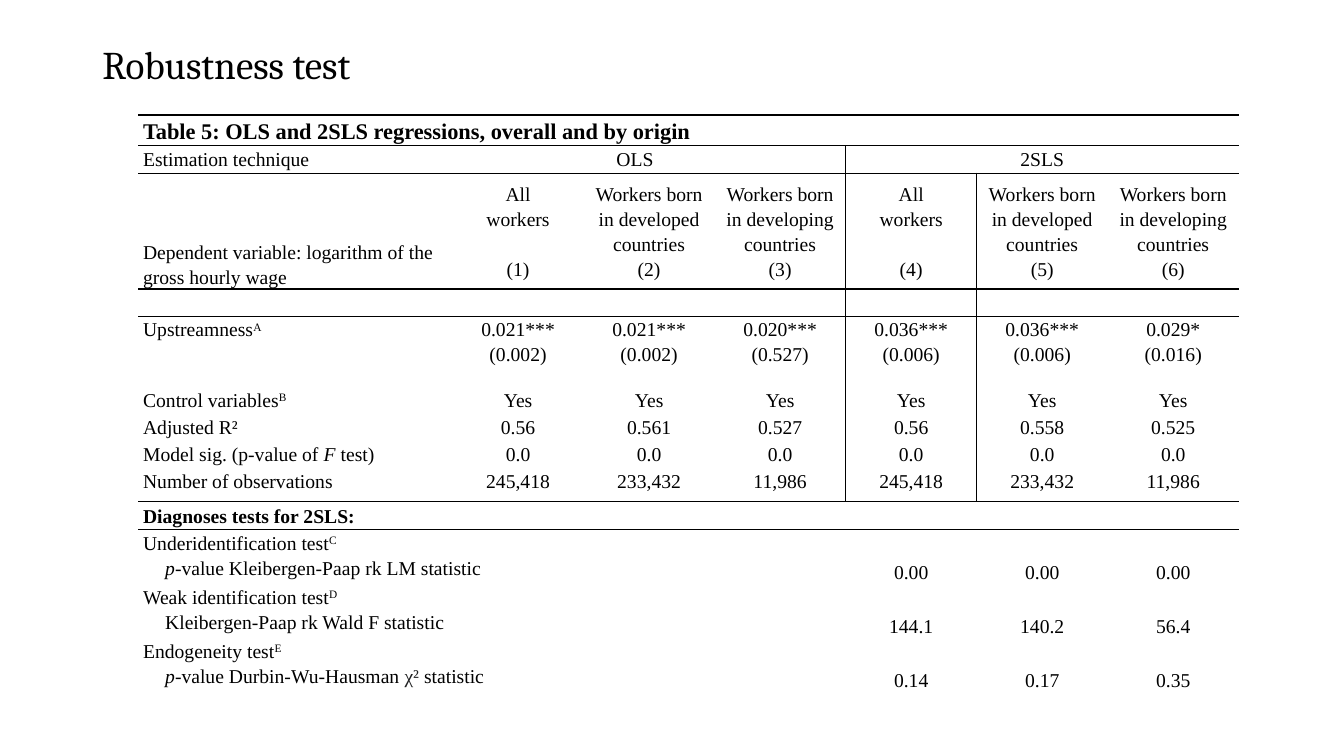
import pptx
import pptx.dml.color
import pptx.enum.text
import pptx.oxml.ns
import pptx.util
from lxml import etree

Pt = pptx.util.Pt
qn = pptx.oxml.ns.qn
ALIGN = pptx.enum.text.PP_ALIGN
ANCHOR = pptx.enum.text.MSO_ANCHOR

BLACK = pptx.dml.color.RGBColor(0x00, 0x00, 0x00)
CHARCOAL = pptx.dml.color.RGBColor(0x20, 0x21, 0x22)
NO_GRID_STYLE = "{2D5ABB26-0587-4C30-8999-92F81FD0307C}"

# Table geometry
COLUMN_WIDTHS = [204.5, 20.2] + [93.6] * 6
ROW_HEIGHTS = [22, 19.5, 82.8, 19.5, 50.5] + [19.3] * 3 + [24, 20] + [38.6] * 3
FIRST_VALUE, FIRST_2SLS = 2, 5
RULED_ROWS = (0, 1, 2, 3, 9)  # rows with a rule above
DIVIDED_ROWS = range(1, 9)  # rows with the OLS | 2SLS divider

# Column headings, repeated for OLS and 2SLS
SAMPLES = [
    "All\nworkers",
    "Workers born in developed countries",
    "Workers born in developing countries",
]

# Each label is a list of (text, style) runs
RESULTS = [
    ([("Upstreamness", ""), ("A", "superscript")],
     ["0.021***\n(0.002)", "0.021***\n(0.002)", "0.020***\n(0.527)",
      "0.036***\n(0.006)", "0.036***\n(0.006)", "0.029*\n(0.016)"]),
    ([("Control variables", ""), ("B", "superscript")], ["Yes"] * 6),
    ([("Adjusted R²", "")], ["0.56", "0.561", "0.527", "0.56", "0.558", "0.525"]),
    ([("Model sig. (p-value of ", ""), ("F", "italic"), (" test)", "")], ["0.0"] * 6),
    ([("Number of observations", "")], ["245,418", "233,432", "11,986"] * 2),
]
DIAGNOSES = [
    ("Underidentification test", "C",
     [("p", "italic"), ("-value Kleibergen-Paap rk LM statistic", "")],
     ["0.00", "0.00", "0.00"]),
    ("Weak identification test", "D",
     [("Kleibergen-Paap rk Wald F statistic", "")],
     ["144.1", "140.2", "56.4"]),
    ("Endogeneity test", "E",
     [("p", "italic"), ("-value Durbin-Wu-Hausman ", ""), ("χ²", "symbol"),
      (" statistic", "")],
     ["0.14", "0.17", "0.35"]),
]


class SlideBuilder:
    """Holds the style and the current slide."""

    title_font = "Cambria"
    body_font = "Times New Roman"
    body_size = 14
    line_spacing = 1.15

    def __init__(self, presentation):
        self.slide = presentation.slides.add_slide(presentation.slide_layouts[6])

    def title(self, text, left, top, width, height):
        text_frame = self.slide.shapes.add_textbox(
            Pt(left), Pt(top), Pt(width), Pt(height)).text_frame
        text_frame.word_wrap = True
        text_frame.text = text
        paragraph = text_frame.paragraphs[0]
        paragraph.line_spacing = 0.9
        font = paragraph.runs[0].font
        font.name, font.size = self.title_font, Pt(28)
        font.color.rgb = BLACK

    def table(self, left, top, widths, heights):
        frame = self.slide.shapes.add_table(
            len(heights), len(widths), Pt(left), Pt(top),
            Pt(sum(widths)), Pt(sum(heights)))
        table = frame.table
        table.first_row = table.horz_banding = False
        table._tbl.tblPr.find(qn("a:tableStyleId")).text = NO_GRID_STYLE
        for column, width in zip(table.columns, widths):
            column.width = Pt(width)
        for row, height in zip(table.rows, heights):
            row.height = Pt(height)
        for cell in table.iter_cells():
            cell.margin_left = cell.margin_right = Pt(3.6)
            cell.margin_top = cell.margin_bottom = 0
            # Keep empty cells from stretching their row
            end = etree.SubElement(cell.text_frame.paragraphs[0]._p, qn("a:endParaRPr"))
            end.set("sz", str(self.body_size * 100))
        return table

    def border(self, cell, sides):
        properties = cell._tc.get_or_add_tcPr()
        for side in sides:
            line = etree.SubElement(properties, qn("a:ln" + side), w=str(Pt(1)))
            fill = etree.SubElement(line, qn("a:solidFill"))
            etree.SubElement(fill, qn("a:srgbClr"), val=str(BLACK))

    def style_run(self, run, style, size):
        font = run.font
        font.name, font.size = self.body_font, Pt(size)
        font.bold, font.italic = style == "bold", style == "italic"
        font.color.rgb = CHARCOAL if style == "symbol" else BLACK
        if style == "superscript":
            run._r.get_or_add_rPr().set("baseline", "30000")

    def rich_text(self, cell, lines, anchor=ANCHOR.TOP, size=body_size):
        """Fill a cell with left-aligned lines of (text, style) runs."""
        cell.vertical_anchor = anchor
        for number, runs in enumerate(lines):
            text_frame = cell.text_frame
            paragraph = text_frame.add_paragraph() if number else text_frame.paragraphs[0]
            paragraph.line_spacing = self.line_spacing
            if number:
                paragraph._p.get_or_add_pPr().set("indent", str(Pt(15.8)))
            for text, style in runs:
                run = paragraph.add_run()
                run.text = text
                self.style_run(run, style, size)

    def value(self, cell, text, anchor=ANCHOR.TOP):
        """Fill a cell with plain centred lines."""
        cell.vertical_anchor = anchor
        cell.text_frame.text = text
        for paragraph in cell.text_frame.paragraphs:
            paragraph.alignment = ALIGN.CENTER
            paragraph.line_spacing = self.line_spacing
            for run in paragraph.runs:
                self.style_run(run, "", self.body_size)


def fill_table(builder, table):
    # Rules and the divider between the two techniques
    for row in range(len(ROW_HEIGHTS)):
        for column in range(len(COLUMN_WIDTHS)):
            sides = []
            if row in DIVIDED_ROWS and column == FIRST_2SLS:
                sides.append("L")
            if row in DIVIDED_ROWS and column == FIRST_2SLS - 1:
                sides.append("R")
            if row in RULED_ROWS:
                sides.append("T")
            if row + 1 in RULED_ROWS:
                sides.append("B")
            cell = table.cell(row, column)
            builder.border(cell, sides)
            cell.fill.background()

    # Merged cells: row, first column, last column
    spans = [(0, 0, 7), (1, 1, 4), (1, 5, 7), (9, 0, 2)]
    spans += [(row, 0, 1) for row in range(2, 9)]
    spans += [(row, 0, 3) for row in range(10, 13)]
    for row, first, last in spans:
        table.cell(row, first).merge(table.cell(row, last))

    # Heading rows
    builder.rich_text(
        table.cell(0, 0),
        [[("Table 5: OLS and 2SLS regressions, overall and by origin", "bold")]],
        ANCHOR.MIDDLE, 16)
    builder.rich_text(table.cell(1, 0), [[("Estimation technique", "")]])
    builder.value(table.cell(1, 1), "OLS")
    builder.value(table.cell(1, FIRST_2SLS), "2SLS")
    builder.rich_text(
        table.cell(2, 0),
        [[("Dependent variable: logarithm of the gross hourly wage", "")]],
        ANCHOR.BOTTOM)
    for number, sample in enumerate(SAMPLES * 2):
        cell = table.cell(2, FIRST_VALUE + number)
        builder.value(cell, f"{sample}\n({number + 1})", ANCHOR.MIDDLE)
        if sample == SAMPLES[0]:
            cell.text_frame.paragraphs[-1].space_before = Pt(18)

    # Regression results
    for row, (label, values) in enumerate(RESULTS, 4):
        builder.rich_text(table.cell(row, 0), [label])
        for column, text in enumerate(values, FIRST_VALUE):
            builder.value(table.cell(row, column), text)

    # Diagnoses
    builder.rich_text(table.cell(9, 0), [[("Diagnoses tests for 2SLS:", "bold")]],
                      ANCHOR.MIDDLE)
    for row, (test, note, statistic, values) in enumerate(DIAGNOSES, 10):
        builder.rich_text(table.cell(row, 0),
                          [[(test, ""), (note, "superscript")], statistic])
        for column, text in enumerate(values, FIRST_2SLS):
            builder.value(table.cell(row, column), text, ANCHOR.BOTTOM)


def main():
    presentation = pptx.Presentation()
    presentation.slide_width, presentation.slide_height = Pt(960), Pt(540)
    builder = SlideBuilder(presentation)
    builder.title("Robustness test", 66, 28.75, 828, 53)
    fill_table(builder, builder.table(98.6, 82.1, COLUMN_WIDTHS, ROW_HEIGHTS))
    presentation.save("out.pptx")


if __name__ == "__main__":
    main()
